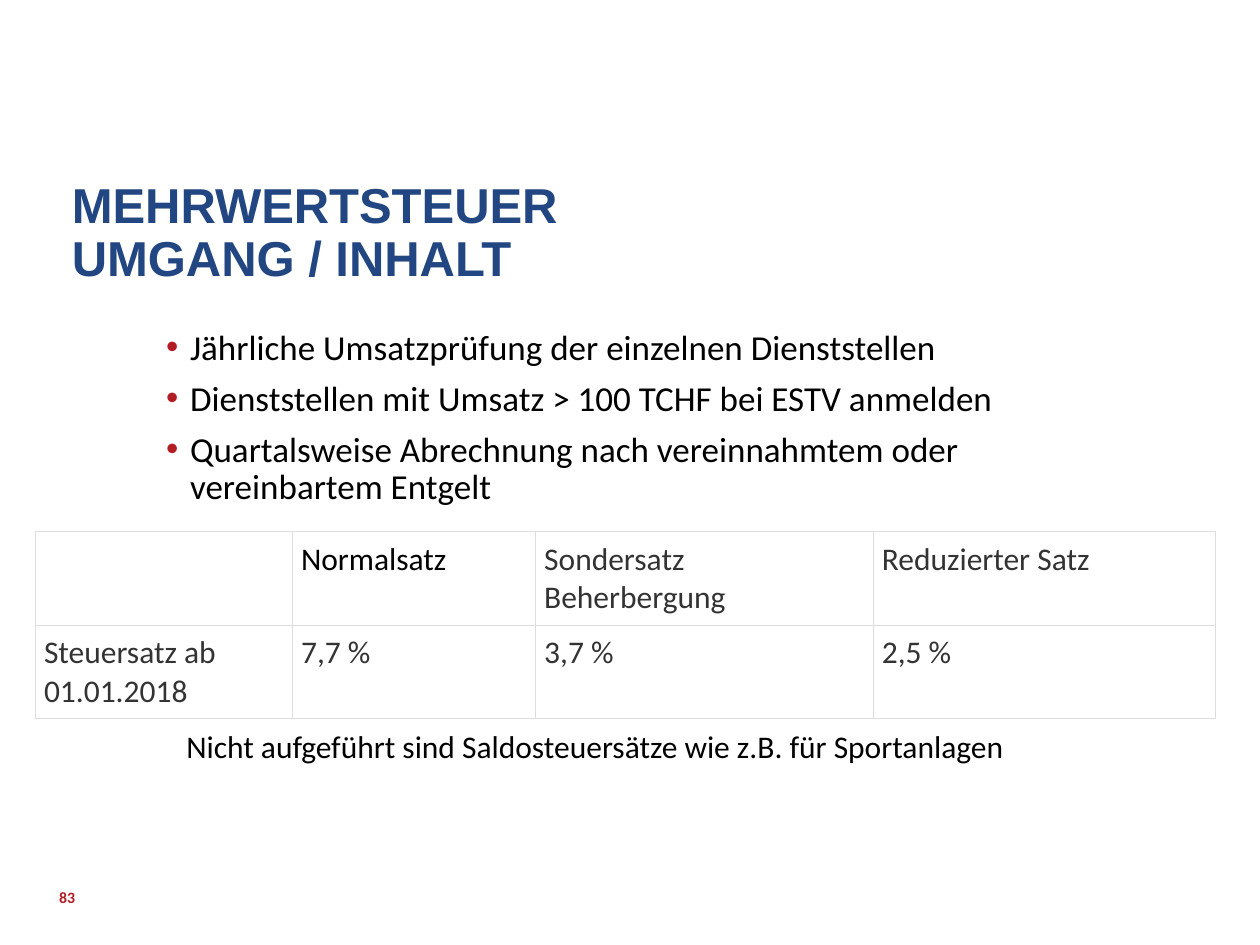
from typing import NamedTuple

from lxml.etree import SubElement
from pptx import Presentation
from pptx.dml.color import RGBColor
from pptx.enum.text import MSO_ANCHOR, MSO_AUTO_SIZE, PP_ALIGN
from pptx.oxml.ns import qn
from pptx.util import Inches, Pt

COLORS = {
    "title": "224681",
    "accent": "B21D24",
    "text": "000000",
    "table_text": "333333",
    "border": "DDDDDD",
    "background": "FFFFFF",
}


class Box(NamedTuple):
    left: float
    top: float
    width: float
    height: float

    def emu(self) -> list:
        return [Inches(length) for length in self]


class Style(NamedTuple):
    size: float
    color: str = "text"
    bold: bool = False
    family: str = "Calibri"


TITLE = Style(28, "title", True, "Arial")
BULLET = Style(20)
NOTE = Style(18)
PAGE_NUMBER = Style(9, "accent", True)

BULLETS = [
    "Jährliche Umsatzprüfung der einzelnen Dienststellen",
    "Dienststellen mit Umsatz > 100 TCHF bei ESTV anmelden",
    "Quartalsweise Abrechnung nach vereinnahmtem oder vereinbartem Entgelt",
]
RATES = [
    ["", "Normalsatz", "Sondersatz Beherbergung", "Reduzierter Satz"],
    ["Steuersatz ab 01.01.2018", "7,7 %", "3,7 %", "2,5 %"],
]
COLUMN_WIDTHS = [2.04, 1.93, 2.68, 2.72]


def apply_style(paragraph, style: Style) -> None:
    font = paragraph.font
    font.name, font.size, font.bold = style.family, Pt(style.size), style.bold
    font.color.rgb = RGBColor.from_string(COLORS[style.color])


def add_text(slide, box: Box, text: str, style: Style, wrap: bool = True):
    frame = slide.shapes.add_textbox(*box.emu()).text_frame
    frame.word_wrap = wrap
    frame.text = text
    apply_style(frame.paragraphs[0], style)
    return frame


def set_bullet(paragraph) -> None:
    properties = paragraph._p.get_or_add_pPr()
    properties.set("marL", str(Inches(0.19)))
    properties.set("indent", str(-Inches(0.19)))
    color = SubElement(properties, qn("a:buClr"))
    SubElement(color, qn("a:srgbClr"), val=COLORS["accent"])
    SubElement(properties, qn("a:buFont"), typeface="Arial")
    SubElement(properties, qn("a:buChar"), char="•")


def add_bullets(slide, box: Box, items: list[str]) -> None:
    frame = slide.shapes.add_textbox(*box.emu()).text_frame
    frame.word_wrap = True
    frame.text = "\n".join(items)
    for index, paragraph in enumerate(frame.paragraphs):
        set_bullet(paragraph)
        paragraph.line_spacing = 0.9
        if index:
            paragraph.space_before = Pt(7.5)
        apply_style(paragraph, BULLET)


def set_borders(cell) -> None:
    properties = cell._tc.get_or_add_tcPr()
    for position, side in enumerate(("lnL", "lnR", "lnT", "lnB")):
        line = properties.makeelement(qn(f"a:{side}"), {"w": str(Pt(0.6))})
        fill = SubElement(line, qn("a:solidFill"))
        SubElement(fill, qn("a:srgbClr"), val=COLORS["border"])
        properties.insert(position, line)


def add_rate_table(slide, box: Box) -> None:
    table = slide.shapes.add_table(len(RATES), len(COLUMN_WIDTHS), *box.emu()).table
    table.first_row = table.horz_banding = False
    for column, width in zip(table.columns, COLUMN_WIDTHS):
        column.width = Inches(width)
    for row, texts in enumerate(RATES):
        for column, text in enumerate(texts):
            cell = table.cell(row, column)
            cell.text = text
            cell.margin_left = cell.margin_right = Inches(0.07)
            cell.margin_top = cell.margin_bottom = Inches(0.07)
            cell.fill.solid()
            cell.fill.fore_color.rgb = RGBColor.from_string(COLORS["background"])
            set_borders(cell)
            color = "text" if text == "Normalsatz" else "table_text"
            apply_style(cell.text_frame.paragraphs[0], Style(18, color))


def set_title(slide, box: Box, text: str) -> None:
    title = slide.shapes.title
    title.left, title.top, title.width, title.height = box.emu()
    frame = title.text_frame
    frame.text = text
    frame.vertical_anchor = MSO_ANCHOR.MIDDLE
    frame.auto_size = MSO_AUTO_SIZE.NONE
    paragraph = frame.paragraphs[0]
    paragraph.alignment = PP_ALIGN.LEFT
    paragraph.line_spacing = 0.9
    apply_style(paragraph, TITLE)


def main() -> None:
    presentation = Presentation()
    presentation.slide_width, presentation.slide_height = Inches(10), Inches(7.5)
    slide = presentation.slides.add_slide(presentation.slide_layouts[5])

    set_title(slide, Box(0.47, 1.39, 7.64, 0.94), "MEHRWERTSTEUER\vUMGANG / INHALT")
    add_bullets(slide, Box(1.22, 2.57, 7.64, 1.57), BULLETS)

    page_number = add_text(slide, Box(0.47, 6.92, 2.25, 0.4), "83", PAGE_NUMBER)
    page_number.vertical_anchor = MSO_ANCHOR.MIDDLE
    page_number.margin_left = page_number.margin_right = 0
    page_number.margin_top = page_number.margin_bottom = 0

    add_rate_table(slide, Box(0.28, 4.22, sum(COLUMN_WIDTHS), 1.47))
    note = "Nicht aufgeführt sind Saldosteuersätze wie z.B. für Sportanlagen"
    add_text(slide, Box(1.38, 5.72, 6.92, 0.71), note, NOTE, wrap=False)

    presentation.save("out.pptx")


if __name__ == "__main__":
    main()
